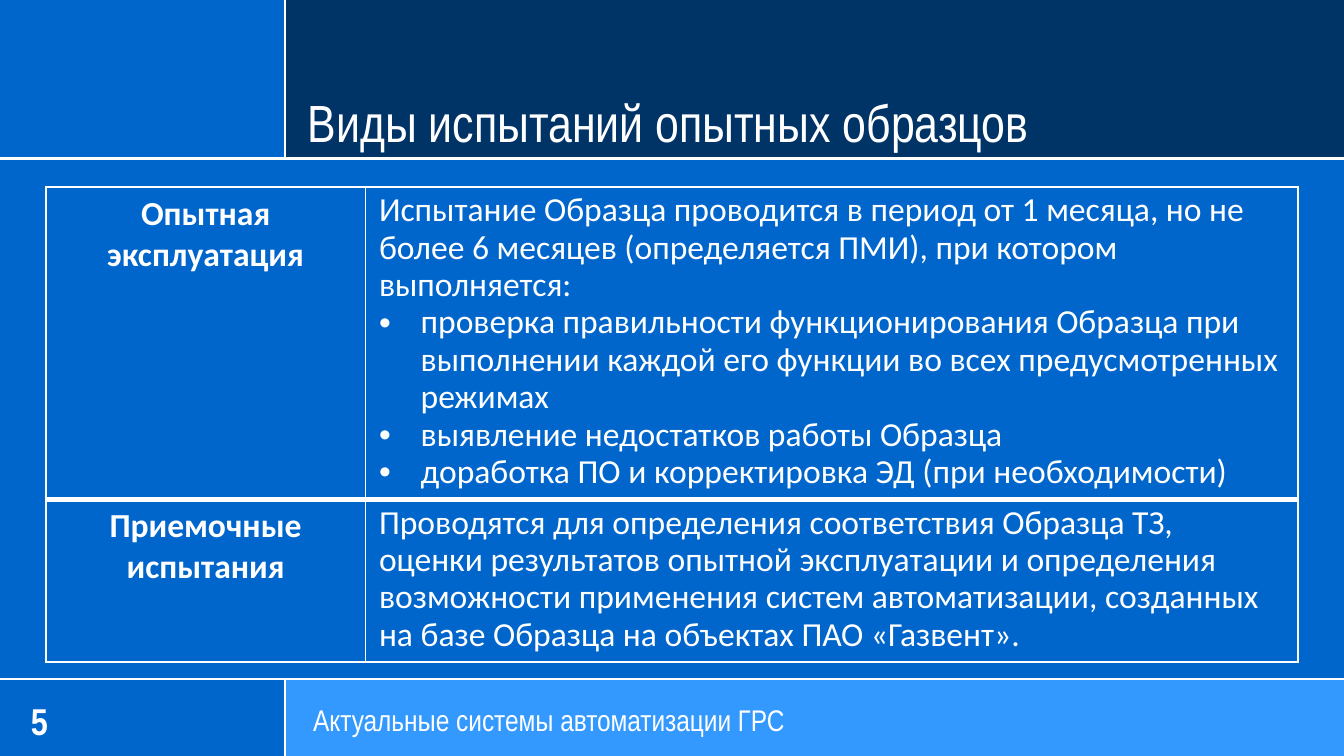
from lxml.etree import SubElement
from pptx import Presentation
from pptx.dml.color import RGBColor
from pptx.enum.shapes import MSO_CONNECTOR as Connector, MSO_SHAPE as Shape
from pptx.enum.text import MSO_ANCHOR as Anchor, MSO_AUTO_SIZE as AutoSize, PP_ALIGN as Align
from pptx.oxml import parse_xml
from pptx.oxml.ns import nsdecls, qn
from pptx.util import Inches, Pt

WHITE = RGBColor(0xFF, 0xFF, 0xFF)
BLUE = RGBColor(0x00, 0x66, 0xCC)
NAVY = RGBColor(0x00, 0x33, 0x66)
SKY = RGBColor(0x33, 0x99, 0xFF)

# Grid of square cells, 100 columns by 56.25 rows
CELL = Inches(0.1)
COLUMNS, ROWS = 100, 56.25
SIDEBAR = 21.2
HEADER = 11.8
FOOTER = 50.55

TITLE = "Виды испытаний опытных образцов"
COURSE = "Актуальные системы автоматизации ГРС"
PAGE = "5"
# Each test: name, description, list of works, row height
TESTS = [
    ("Опытная эксплуатация",
     "Испытание Образца проводится в период от 1 месяца, но не более 6 месяцев "
     "(определяется ПМИ), при котором выполняется:",
     ["проверка правильности функционирования Образца при выполнении каждой его "
      "функции во всех предусмотренных режимах",
      "выявление недостатков работы Образца",
      "доработка ПО и корректировка ЭД (при необходимости)"],
     23.2),
    ("Приемочные испытания",
     "Проводятся для определения соответствия Образца ТЗ, оценки результатов опытной "
     "эксплуатации и определения возможности применения систем автоматизации, "
     "созданных на базе Образца на объектах ПАО «Газвент».",
     [],
     12.1),
]


def grid(*lengths):
    return [round(length * CELL) for length in lengths]


class Deck:
    heading_font = "Arial Narrow"
    body_font = "Calibri"

    def __init__(self):
        self.presentation = Presentation()
        self.presentation.slide_width, self.presentation.slide_height = grid(COLUMNS, ROWS)
        self.slide = self.presentation.slides.add_slide(self.presentation.slide_layouts[5])

    def style(self, paragraph, size, name, bold=False):
        font = paragraph.font
        font.size, font.name, font.bold = Pt(size), name, bold
        font.color.rgb = WHITE

    def panel(self, left, top, right, bottom, color):
        panel = self.slide.shapes.add_shape(
            Shape.RECTANGLE, *grid(left, top, right - left, bottom - top))
        panel.shadow.inherit = False
        panel.fill.solid()
        panel.fill.fore_color.rgb = color
        panel.line.fill.background()

    def rule(self, *ends):
        rule = self.slide.shapes.add_connector(Connector.STRAIGHT, *grid(*ends))
        rule.line.color.rgb = WHITE
        rule.line.width = Pt(1.25)
        SubElement(rule._element.spPr, qn("a:effectLst"))

    def title(self, text, *place):
        title = self.slide.shapes.title
        title.left, title.top, title.width, title.height = grid(*place)
        frame = title.text_frame
        frame.text = text
        frame.auto_size = AutoSize.NONE
        frame.vertical_anchor = Anchor.TOP
        frame.paragraphs[0].alignment = Align.LEFT
        self.style(frame.paragraphs[0], 28, self.heading_font)
        self.slide.shapes._spTree.append(title._element)  # bring to front

    def label(self, text, *place, size, bold=False):
        frame = self.slide.shapes.add_textbox(*grid(*place)).text_frame
        frame.margin_left = frame.margin_right = frame.margin_top = frame.margin_bottom = 0
        frame.word_wrap = True
        frame.vertical_anchor = Anchor.MIDDLE
        frame.text = text
        self.style(frame.paragraphs[0], size, self.heading_font, bold)

    def borders(self, cell, top, bottom):
        properties = cell._tc.get_or_add_tcPr()
        sides = {"lnL": 1, "lnR": 1, "lnT": top, "lnB": bottom}
        for position, (side, width) in enumerate(sides.items()):
            properties.insert(position, parse_xml(
                f'<a:{side} {nsdecls("a")} w="{Pt(width)}"><a:solidFill>'
                f'<a:srgbClr val="{WHITE}"/></a:solidFill></a:{side}>'))

    def bullet(self, paragraph):
        properties = paragraph._p.get_or_add_pPr()
        properties.set("marL", str(Inches(0.31)))
        properties.set("indent", str(-Inches(0.31)))
        SubElement(properties, qn("a:buFont"), typeface="Arial")
        SubElement(properties, qn("a:buChar"), char="•")

    def test_table(self, tests, left, top, widths):
        heights = [height for *_, height in tests]
        table = self.slide.shapes.add_table(
            len(tests), len(widths), *grid(left, top, sum(widths), sum(heights))).table
        table.first_row = table.horz_banding = False
        for column, width in zip(table.columns, grid(*widths)):
            column.width = width
        last = len(tests) - 1
        for index, (name, description, works, height) in enumerate(tests):
            table.rows[index].height = grid(height)[0]
            name_cell, text_cell = table.rows[index].cells
            for cell in (name_cell, text_cell):
                cell.fill.background()
                self.borders(cell, 3 if index else 1, 3 if index < last else 1)
            name_cell.text = name
            heading = name_cell.text_frame.paragraphs[0]
            heading.alignment = Align.CENTER
            self.style(heading, 18, self.body_font, bold=True)
            text_cell.text = "\n".join([description, *works])
            for number, paragraph in enumerate(text_cell.text_frame.paragraphs):
                paragraph.line_spacing = Pt(20)
                if number:
                    self.bullet(paragraph)
                self.style(paragraph, 18, self.body_font)


def main():
    deck = Deck()
    deck.panel(0, 0, COLUMNS, ROWS, BLUE)
    deck.panel(SIDEBAR, 0, COLUMNS, HEADER, NAVY)
    deck.panel(SIDEBAR, FOOTER, COLUMNS, ROWS, SKY)
    for top, bottom in ((0, HEADER), (FOOTER, ROWS)):
        deck.rule(SIDEBAR, top, SIDEBAR, bottom)
    for level in (HEADER, FOOTER):
        deck.rule(0, level, COLUMNS, level)
    deck.label(PAGE, 2.3, 51, 16.2, 5.2, size=20, bold=True)
    deck.label(COURSE, 23.3, 52.2, 76.7, 2.7, size=16)
    deck.title(TITLE, 21.9, 6.2, 75.2, 5.7)
    deck.test_table(TESTS, 3.4, 13.9, (23.8, 69.4))
    deck.presentation.save("out.pptx")


if __name__ == "__main__":
    main()
